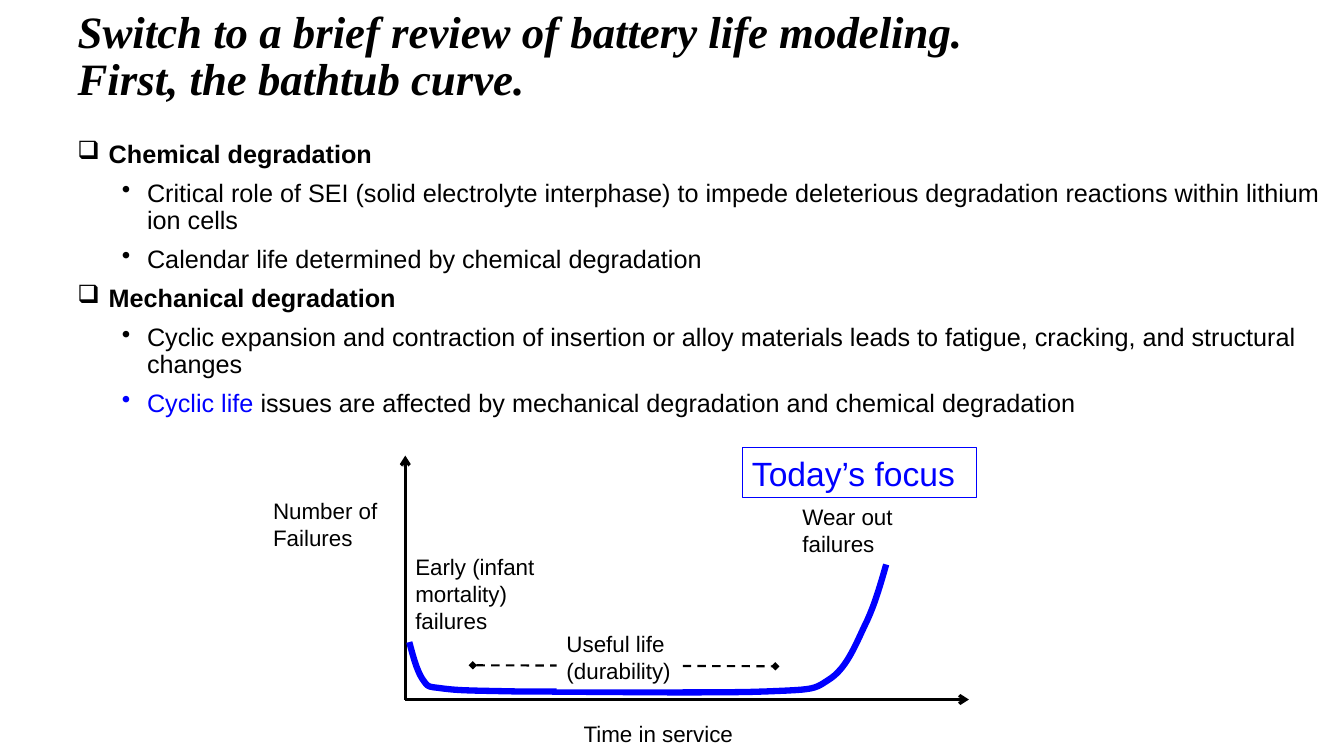
from lxml.etree import SubElement
from pptx import Presentation
from pptx.dml.color import RGBColor
from pptx.enum.dml import MSO_LINE
from pptx.enum.shapes import MSO_CONNECTOR, MSO_SHAPE
from pptx.enum.text import MSO_ANCHOR, MSO_AUTO_SIZE, PP_ALIGN
from pptx.oxml.ns import qn
from pptx.util import Inches, Pt

COLORS = {"black": "000000", "blue": "0000FF", "white": "FFFFFF"}
BODY_FONT, TITLE_FONT = "Arial", "Times New Roman"

TITLE = "Switch to a brief review of battery life modeling. First, the bathtub curve."
# Each bullet: level, then runs of (text, color)
BULLETS = [
    (0, [("Chemical degradation", "black")]),
    (1, [("Critical role of SEI (solid electrolyte interphase) to impede deleterious "
          "degradation reactions within lithium ion cells", "black")]),
    (1, [("Calendar life determined by chemical degradation", "black")]),
    (0, [("Mechanical degradation", "black")]),
    (1, [("Cyclic expansion and contraction of insertion or alloy materials leads to "
          "fatigue, cracking, and structural changes", "black")]),
    (1, [("Cyclic life ", "blue"),
         ("issues are affected by mechanical degradation and chemical degradation", "black")]),
]
# Per level: bullet character, left margin, hanging indent, bold
LEVELS = [("❑", 0.31, 0.31, True), ("•", 0.69, 0.25, False)]

ORIGIN = (4.02, 6.94)
AXIS_ENDS = [(4.02, 4.52), (9.61, 6.94)]
USEFUL_LIFE_SPAN = [(4.69, 6.6), (7.69, 6.61)]
CURVE_START = (4.06, 6.37)
# Cubic segments: two control points and an end point
CURVE = [
    ((4.1, 6.52), (4.14, 6.67), (4.2, 6.75)),
    ((4.25, 6.82), (4.24, 6.81), (4.39, 6.83)),
    ((4.55, 6.85), (4.61, 6.85), (5.14, 6.86)),
    ((5.68, 6.86), (7.08, 6.88), (7.59, 6.86)),
    ((8.11, 6.84), (8.07, 6.84), (8.24, 6.73)),
    ((8.4, 6.62), (8.49, 6.39), (8.58, 6.2)),
    ((8.67, 6.02), (8.73, 5.81), (8.79, 5.6)),
]
STEPS = 12

LABELS = [
    ("Number of Failures", (2.61, 4.88, 1.25, 0.64)),
    ("Time in service", (5.69, 7.1, 2.83, 0.37)),
    ("Early (infant mortality) failures", (4.02, 5.44, 1.42, 0.91)),
    ("Wear out failures", (7.86, 4.94, 1.42, 0.64)),
]
USEFUL_LIFE = (["Useful life", "(durability)"], (5.52, 6.2, 1.25, 0.64))
FOCUS = ("Today’s focus", (7.36, 4.44, 2.33, 0.5))


def rgb(name):
    return RGBColor.from_string(COLORS[name])


def inches(values):
    return [Inches(value) for value in values]


def add_run(paragraph, text, size, color="black", font=BODY_FONT, bold=False, italic=False):
    run = paragraph.add_run()
    run.text = text
    run.font.name, run.font.size = font, Pt(size)
    run.font.bold, run.font.italic = bold, italic
    run.font.color.rgb = rgb(color)


def set_frame(shape, anchor=MSO_ANCHOR.TOP):
    frame = shape.text_frame
    frame.word_wrap = True
    frame.auto_size = MSO_AUTO_SIZE.NONE
    frame.vertical_anchor = anchor
    return frame


def write_lines(shape, lines, size, color="black"):
    frame = set_frame(shape)
    for index, text in enumerate(lines):
        paragraph = frame.add_paragraph() if index else frame.paragraphs[0]
        paragraph.alignment = PP_ALIGN.LEFT
        add_run(paragraph, text, size, color)


def add_bullets(slide):
    frame = set_frame(slide.shapes.add_textbox(*inches((0.67, 1.36, 12.58, 4.55))))
    for index, (level, runs) in enumerate(BULLETS):
        paragraph = frame.add_paragraph() if index else frame.paragraphs[0]
        character, margin, hanging, bold = LEVELS[level]
        properties = paragraph._p.get_or_add_pPr()
        properties.set("marL", str(Inches(margin)))
        properties.set("indent", str(-Inches(hanging)))
        SubElement(properties, qn("a:buChar"), char=character)
        paragraph.level = level
        paragraph.line_spacing = 0.88
        paragraph.space_before = Pt(9 if index else 0)
        for text, color in runs:
            add_run(paragraph, text, 18, color, bold=bold)


def add_line(slide, start, end, width, dash=None, head=None, tail=None):
    line = slide.shapes.add_connector(MSO_CONNECTOR.STRAIGHT, *inches(start + end))
    line.line.color.rgb = rgb("black")
    line.line.width = Pt(width)
    if dash:
        line.line.dash_style = dash
    outline = line.line._get_or_add_ln()
    for tag, kind in (("a:headEnd", head), ("a:tailEnd", tail)):
        if kind:
            SubElement(outline, qn(tag), type=kind)
    SubElement(line._element.spPr, qn("a:effectLst"))


def curve_points():
    """Sample the cubic segments at equal parameter steps."""
    points, start = [], CURVE_START
    for first, second, end in CURVE:
        for step in range(1, STEPS + 1):
            t = step / STEPS
            u = 1 - t
            points.append(tuple(
                u**3 * a + 3 * u * u * t * b + 3 * u * t * t * c + t**3 * d
                for a, b, c, d in zip(start, first, second, end)))
        start = end
    return points


def add_bathtub_curve(slide):
    builder = slide.shapes.build_freeform(*inches(CURVE_START))
    builder.add_line_segments([inches(point) for point in curve_points()], close=False)
    curve = builder.convert_to_shape()
    curve.shadow.inherit = False
    curve.fill.background()
    curve.line.color.rgb = rgb("blue")
    curve.line.width = Pt(4.5)


def add_box(slide, box):
    shape = slide.shapes.add_shape(MSO_SHAPE.RECTANGLE, *inches(box))
    shape.shadow.inherit = False
    return shape


def main():
    presentation = Presentation()
    presentation.slide_width, presentation.slide_height = inches((13.33, 7.5))
    slide = presentation.slides.add_slide(presentation.slide_layouts[5])

    title = slide.shapes.title
    title.left, title.top, title.width, title.height = inches((0.67, 0.19, 9.5, 0.77))
    paragraph = set_frame(title, MSO_ANCHOR.MIDDLE).paragraphs[0]
    paragraph.alignment = PP_ALIGN.LEFT
    paragraph.line_spacing = 0.88
    add_run(paragraph, TITLE, 32, font=TITLE_FONT, bold=True, italic=True)

    add_bullets(slide)
    for end in AXIS_ENDS:
        add_line(slide, ORIGIN, end, 2.25, tail="arrow")
    add_bathtub_curve(slide)
    for text, box in LABELS:
        write_lines(slide.shapes.add_textbox(*inches(box)), [text], 16)
    add_line(slide, *USEFUL_LIFE_SPAN, 1.5, MSO_LINE.DASH, "diamond", "diamond")

    lines, box = USEFUL_LIFE
    useful_life = add_box(slide, box)
    useful_life.fill.solid()
    useful_life.fill.fore_color.rgb = rgb("white")
    useful_life.line.fill.background()
    write_lines(useful_life, lines, 16)

    text, box = FOCUS
    focus = add_box(slide, box)
    focus.fill.background()
    focus.line.color.rgb = rgb("blue")
    focus.line.width = Pt(0.75)
    write_lines(focus, [text], 24, "blue")

    presentation.save("out.pptx")


if __name__ == "__main__":
    main()
